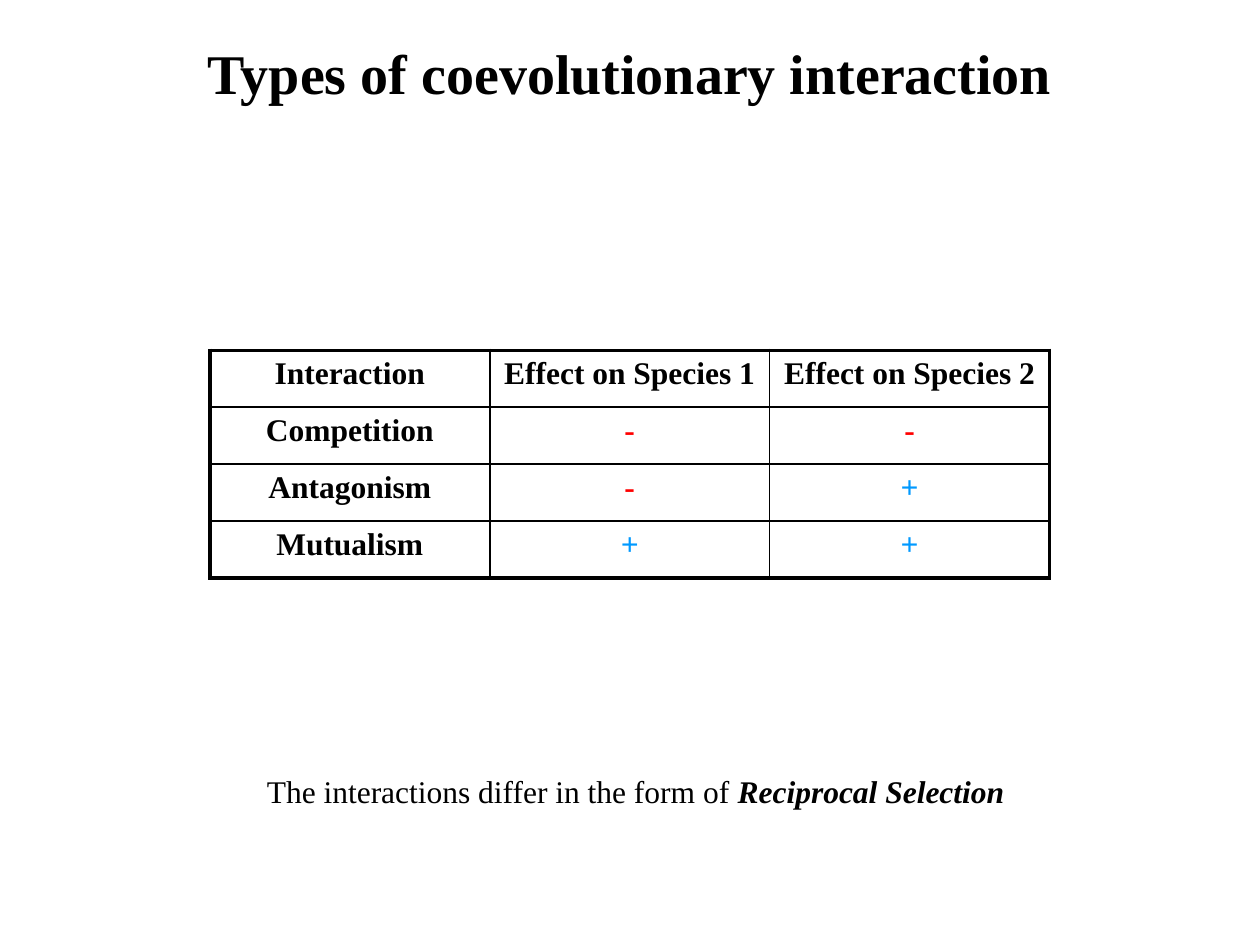
from lxml.etree import SubElement
from pptx import Presentation
from pptx.dml.color import RGBColor
from pptx.enum.text import MSO_ANCHOR, MSO_AUTO_SIZE, PP_ALIGN
from pptx.oxml.ns import qn
from pptx.util import Cm, Pt

BLACK, RED, BLUE = "000000", "FF0000", "0099FF"
SIGNS = {"-": RED, "+": BLUE}
ROWS = [
    ("Interaction", "Effect on Species 1", "Effect on Species 2"),
    ("Competition", "-", "-"),
    ("Antagonism", "-", "+"),
    ("Mutualism", "+", "+"),
]


def color(code):
    return RGBColor.from_string(code)


class Deck:
    """Holds the text style and the current slide."""
    face = "Times New Roman"
    size = 18
    thin, thick = 1, 2.25

    def __init__(self, slide):
        self.slide = slide

    def style(self, run, size=None, code=BLACK, bold=False, italic=False):
        font = run.font
        font.name, font.size = self.face, Pt(size or self.size)
        font.bold, font.italic = bold, italic
        font.color.rgb = color(code)

    def title(self, text, left, top, width, height):
        shape = self.slide.shapes.title
        shape.left, shape.top = Cm(left), Cm(top)
        shape.width, shape.height = Cm(width), Cm(height)
        frame = shape.text_frame
        frame.text = text
        frame.auto_size = MSO_AUTO_SIZE.NONE
        frame.vertical_anchor = MSO_ANCHOR.TOP
        para = frame.paragraphs[0]
        para.alignment = PP_ALIGN.CENTER
        self.style(para.runs[0], 32, bold=True)

    def border(self, cell, sides):
        """Draw the cell's edges; sides maps L, R, T, B to points, in that order."""
        props = cell._tc.get_or_add_tcPr()
        for spot, (side, width) in enumerate(sides.items()):
            line = SubElement(props, qn("a:ln" + side), w=str(Pt(width)))
            fill = SubElement(line, qn("a:solidFill"))
            SubElement(fill, qn("a:srgbClr"), val=BLACK)
            props.insert(spot, line)

    def table(self, rows, left, top, width, height):
        last, end = len(rows) - 1, len(rows[0]) - 1
        grid = self.slide.shapes.add_table(
            last + 1, end + 1, Cm(left), Cm(top), Cm(width), Cm(height)).table
        grid.first_row = grid.horz_banding = False
        for r, row in enumerate(rows):
            for c, text in enumerate(row):
                cell = grid.cell(r, c)
                cell.text = text
                cell.fill.background()
                para = cell.text_frame.paragraphs[0]
                para.alignment = PP_ALIGN.CENTER
                self.style(para.runs[0], code=SIGNS.get(text, BLACK), bold=True)
                outer = {"L": c == 0, "R": c == end, "T": r == 0, "B": r == last}
                self.border(cell, {side: self.thick if edge else self.thin
                                   for side, edge in outer.items()})

    def note(self, plain, strong, left, top, width, height):
        """Add one line of text that ends in bold italics."""
        box = self.slide.shapes.add_textbox(Cm(left), Cm(top), Cm(width), Cm(height))
        frame = box.text_frame
        frame.word_wrap = False
        frame.auto_size = MSO_AUTO_SIZE.SHAPE_TO_FIT_TEXT
        para = frame.paragraphs[0]
        for text, mark in ((plain, False), (strong, True)):
            run = para.add_run()
            run.text = text
            self.style(run, bold=mark, italic=mark)


def main():
    show = Presentation()
    show.slide_width, show.slide_height = Cm(25.4), Cm(19.05)
    deck = Deck(show.slides.add_slide(show.slide_layouts.get_by_name("Title Only")))
    deck.title("Types of coevolutionary interaction", 0, 0.64, 25.4, 1.6)
    deck.table(ROWS, 4.23, 7.06, 16.93, 4.59)
    deck.note("The interactions differ in the form of ", "Reciprocal Selection",
              5.13, 15.44, 15.4, 1.02)
    show.save("out.pptx")


if __name__ == "__main__":
    main()
